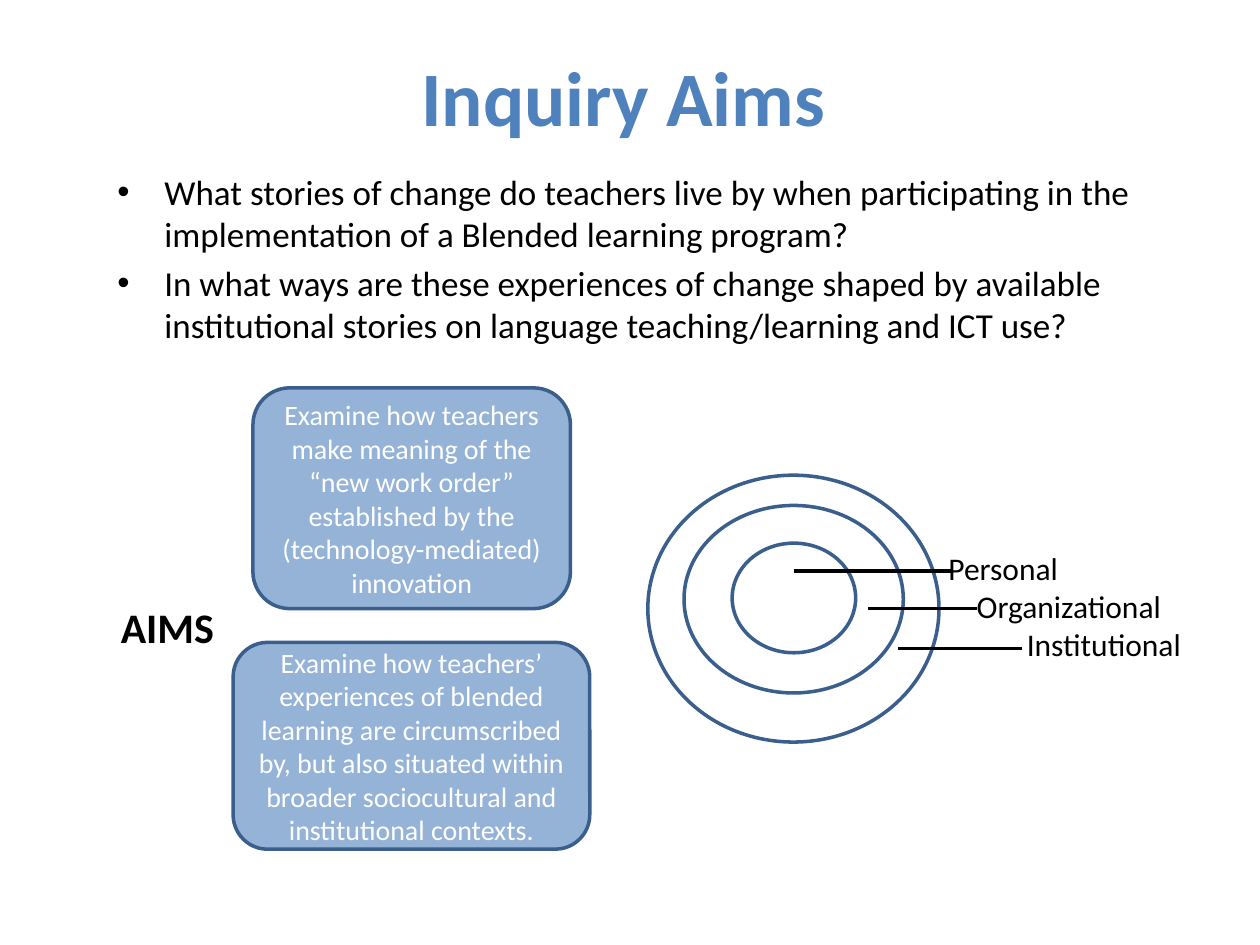
from lxml import etree
from pptx import Presentation
from pptx import util as u
from pptx.dml import color
from pptx.enum import shapes, text
from pptx.oxml import ns

FONT = "Calibri"
BLACK, WHITE = "000000", "FFFFFF"
TITLE_BLUE, BOX_BLUE, OUTLINE_BLUE = "4F81BD", "95B3D7", "3A5F8C"


def rgb(value):
    return color.RGBColor.from_string(value)


def place(shape, left, top, width, height):
    shape.left, shape.top = u.Cm(left), u.Cm(top)
    shape.width, shape.height = u.Cm(width), u.Cm(height)


def indent(paragraph, left, first=0):
    properties = paragraph._p.get_or_add_pPr()
    properties.set("marL", str(u.Cm(left)))
    properties.set("indent", str(u.Cm(first)))
    return properties


class SlideBuilder:
    def __init__(self, presentation):
        self.slide = presentation.slides.add_slide(presentation.slide_layouts[1])

    def style(self, paragraph, size, fill=BLACK, bold=False, align=None):
        paragraph.alignment = align
        font = paragraph.font
        font.name, font.size, font.bold = FONT, u.Pt(size), bold
        font.color.rgb = rgb(fill)

    def title(self, wording, *box):
        title = self.slide.shapes.title
        place(title, *box)
        title.text_frame.text = wording
        title.text_frame.vertical_anchor = text.MSO_ANCHOR.MIDDLE
        self.style(title.text_frame.paragraphs[0], 44, TITLE_BLUE, True, text.PP_ALIGN.CENTER)

    def bullets(self, items, *box):
        body = self.slide.placeholders[1]
        place(body, *box)
        body.text_frame.text = "\n".join(items)
        for number, paragraph in enumerate(body.text_frame.paragraphs):
            properties = indent(paragraph, 0.95, -0.95)
            paragraph.space_before = u.Pt(4 if number else 0)
            bullet_font = etree.SubElement(properties, ns.qn("a:buFont"))
            bullet_font.set("typeface", "Arial")
            etree.SubElement(properties, ns.qn("a:buChar")).set("char", "•")
            self.style(paragraph, 20)

    def outlined(self, kind, *box, fill=None):
        shape = self.slide.shapes.add_shape(kind, *map(u.Cm, box))
        shape.shadow.inherit = False
        if fill:
            shape.fill.solid()
            shape.fill.fore_color.rgb = rgb(fill)
        else:
            shape.fill.background()
        shape.line.color.rgb = rgb(OUTLINE_BLUE)
        shape.line.width = u.Pt(2)
        return shape

    def aim(self, wording, *box):
        shape = self.outlined(shapes.MSO_SHAPE.ROUNDED_RECTANGLE, *box, fill=BOX_BLUE)
        frame = shape.text_frame
        frame.word_wrap = True
        frame.vertical_anchor = text.MSO_ANCHOR.MIDDLE
        frame.text = wording
        self.style(frame.paragraphs[0], 16, WHITE, align=text.PP_ALIGN.CENTER)

    def ring(self, *box):
        self.outlined(shapes.MSO_SHAPE.OVAL, *box)

    def pointer(self, start, end, height):
        line = self.slide.shapes.add_connector(
            shapes.MSO_CONNECTOR.STRAIGHT, u.Cm(start), u.Cm(height), u.Cm(end), u.Cm(height))
        line.line.color.rgb = rgb(BLACK)
        line.line.width = u.Pt(1.75)
        etree.SubElement(line._element.spPr, ns.qn("a:effectLst"))

    def label(self, lines, *box, size, bold=False, align=None):
        """Add a text box from (wording, left indent) pairs."""
        frame = self.slide.shapes.add_textbox(*map(u.Cm, box)).text_frame
        frame.word_wrap = True
        frame.text = "\n".join(wording for wording, _ in lines)
        for paragraph, (_, left) in zip(frame.paragraphs, lines):
            indent(paragraph, left)
            self.style(paragraph, size, bold=bold, align=align)


def main():
    presentation = Presentation()
    presentation.slide_width, presentation.slide_height = u.Cm(25.4), u.Cm(19.05)
    builder = SlideBuilder(presentation)

    builder.title("Inquiry Aims", 1.14, 0.33, 22.86, 3.18)
    builder.bullets([
        "What stories of change do teachers live by when participating in the "
        "implementation of a Blended learning program?",
        "In what ways are these experiences of change shaped by available "
        "institutional stories on language teaching/learning and ICT use?",
    ], 2.11, 3.3, 21.64, 14.07)

    builder.aim("Examine how teachers make meaning of the “new work order” "
                "established by the (technology-mediated) innovation",
                5.1, 7.82, 6.4, 4.45)
    builder.aim("Examine how teachers’ experiences of blended learning are circumscribed "
                "by, but also situated within broader sociocultural and institutional contexts.",
                4.7, 12.95, 7.19, 4.17)
    builder.label([("AIMS", 0)], 1.98, 12.01, 2.79, 1.27,
                  size=24, bold=True, align=text.PP_ALIGN.CENTER)

    for ring in [(13.06, 9.58, 5.87, 5.38), (13.79, 10.19, 4.42, 3.78), (14.76, 10.95, 2.49, 2.21)]:
        builder.ring(*ring)
    for pointer in [(19.2, 16, 11.51), (19.69, 17.5, 12.27), (20.6, 18.11, 13.08)]:
        builder.pointer(*pointer)
    builder.label([("Personal", 0), ("Organizational", 0.57), ("Institutional", 1.58)],
                  18.87, 10.95, 5.97, 2.57, size=18)

    presentation.save("out.pptx")


if __name__ == "__main__":
    main()
